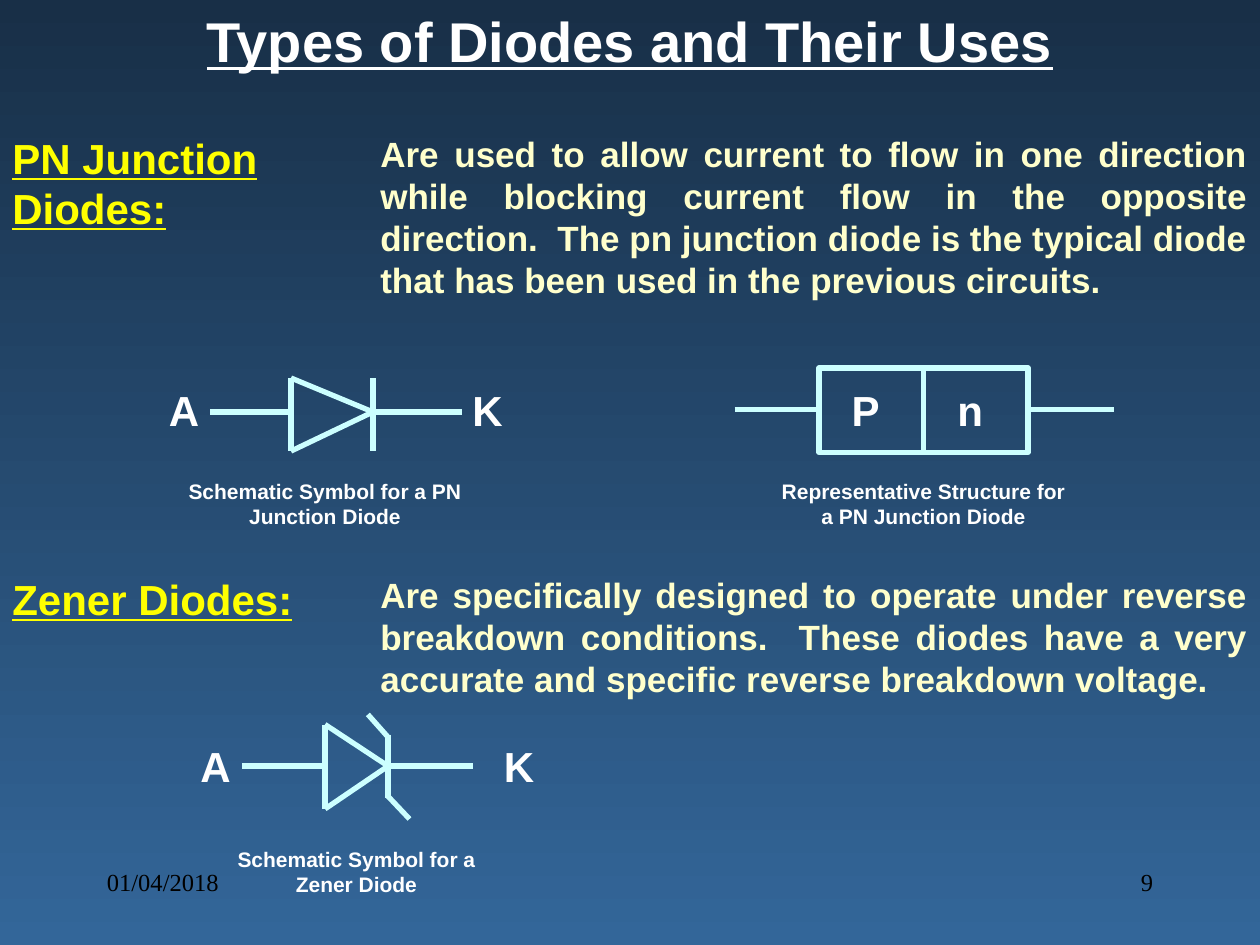
import pptx
import pptx.dml.color
import pptx.enum.shapes
import pptx.enum.text
import pptx.oxml
import pptx.oxml.ns
import pptx.util
from pptx.util import Inches

COLORS = {
    "top": "182F47",
    "bottom": "336699",
    "heading": "FFFF00",
    "body": "FFFFCC",
    "label": "FFFFFF",
    "symbol": "CCFFFF",
    "footer": "000000",
}
ALIGN = pptx.enum.text.PP_ALIGN


def rgb(name):
    return pptx.dml.color.RGBColor.from_string(COLORS[name])


class DiodeSlide:
    """Holds the slide and draws its kinds of element in one style."""

    font = "Arial"
    line_width = pptx.util.Pt(3)

    def __init__(self, prs):
        self.slide = prs.slides.add_slide(prs.slide_layouts[5])
        self.shapes = self.slide.shapes
        fill = self.slide.background.fill
        fill.gradient()
        fill.gradient_angle = 270
        for stop, name in zip(fill.gradient_stops, ("top", "bottom")):
            stop.color.rgb = rgb(name)

    def set_text(self, shape, wording, size, color, align=ALIGN.LEFT,
                 bold=True, underline=False, font=None):
        frame = shape.text_frame
        frame.text = wording
        frame.word_wrap = True
        frame.auto_size = pptx.enum.text.MSO_AUTO_SIZE.NONE
        frame.vertical_anchor = pptx.enum.text.MSO_ANCHOR.TOP
        paragraph = frame.paragraphs[0]
        paragraph.alignment = align
        style = paragraph.runs[0].font
        style.name = font or self.font
        style.size = pptx.util.Pt(size)
        style.bold = bold
        style.underline = underline
        style.color.rgb = rgb(color)

    def title(self, wording):
        title = self.shapes.title
        title.left, title.top = Inches(1), Inches(0)
        title.width, title.height = Inches(8), Inches(0.63)
        self.set_text(title, wording, 32, "label", ALIGN.CENTER, underline=True)

    def text(self, x, y, w, h, wording, size, color, **style):
        box = self.shapes.add_textbox(Inches(x), Inches(y), Inches(w), Inches(h))
        self.set_text(box, wording, size, color, **style)

    def section(self, y, heading, heading_height, body, body_height):
        self.text(0, y, 2.83, heading_height, heading, 24, "heading", underline=True)
        self.text(2.92, y, 7.08, body_height, body, 20, "body", align=ALIGN.JUSTIFY)

    def letter(self, x, y, wording):
        self.text(x, y, 0.58, 0.5, wording, 24, "label", align=ALIGN.CENTER)

    def caption(self, x, y, wording):
        self.text(x, y, 2.5, 0.5, wording, 12, "label", align=ALIGN.CENTER)

    def footer(self, x, wording, align):
        self.text(x, 6.83, 2.08, 0.5, wording, 14, "footer", align=align,
                  bold=False, font="Times New Roman")

    def outline(self, shape):
        shape.line.color.rgb = rgb("symbol")
        shape.line.width = self.line_width

    def line(self, x1, y1, x2, y2):
        connector = self.shapes.add_connector(
            pptx.enum.shapes.MSO_CONNECTOR.STRAIGHT,
            Inches(x1), Inches(y1), Inches(x2), Inches(y2))
        self.outline(connector)
        connector._element.spPr.append(pptx.oxml.parse_xml(
            "<a:effectLst %s/>" % pptx.oxml.ns.nsdecls("a")))

    def region(self, x, y, w, h):
        box = self.shapes.add_shape(
            pptx.enum.shapes.MSO_SHAPE.RECTANGLE,
            Inches(x), Inches(y), Inches(w), Inches(h))
        box.fill.background()
        box.shadow.inherit = False
        self.outline(box)

    def bend(self, x1, y1, x2, y2):
        """Draw one bent end of the zener bar."""
        builder = self.shapes.build_freeform(Inches(x1), Inches(y1))
        builder.add_line_segments([(Inches(x2), Inches(y2))], close=False)
        shape = builder.convert_to_shape()
        shape.fill.background()
        shape.shadow.inherit = False
        self.outline(shape)

    def diode(self, anode, base, tip, cathode, axis, top, bottom, bar):
        """Draw leads, triangle and bar; bar is its (top, bottom)."""
        self.line(anode, axis, base, axis)
        self.line(base, top, base, bottom)
        self.line(base, top, tip, axis)
        self.line(base, bottom, tip, axis)
        self.line(tip, axis, cathode, axis)
        self.line(tip, bar[0], tip, bar[1])


def main():
    prs = pptx.Presentation()
    prs.slide_width, prs.slide_height = Inches(10), Inches(7.5)
    page = DiodeSlide(prs)
    page.title("Types of Diodes and Their Uses")

    page.section(
        1, "PN Junction Diodes:", 0.9,
        "Are used to allow current to flow in one direction while blocking "
        "current flow in the opposite direction.  The pn junction diode is the "
        "typical diode that has been used in the previous circuits.", 1.43)
    page.diode(1.67, 2.31, 2.96, 3.67, axis=3.27, top=3, bottom=3.58, bar=(3, 3.58))
    page.letter(1.17, 3, "A")
    page.letter(3.58, 3, "K")
    page.caption(1.33, 3.75, "Schematic Symbol for a PN Junction Diode")

    for x, name in ((6.5, "P"), (7.33, "n")):
        page.region(x, 2.92, 0.83, 0.67)
        page.letter(x + 0.08, 3, name)
    for x in (5.83, 8.17):
        page.line(x, 3.25, x + 0.67, 3.25)
    page.caption(6.08, 3.75, "Representative Structure for a PN Junction Diode")

    page.section(
        4.5, "Zener Diodes:", 0.5,
        "Are specifically designed to operate under reverse breakdown "
        "conditions.  These diodes have a very accurate and specific reverse "
        "breakdown voltage.", 1.1)
    page.diode(1.92, 2.58, 3.08, 3.75, axis=6.08, top=5.75, bottom=6.42, bar=(5.83, 6.33))
    page.bend(3.08, 5.85, 2.92, 5.67)
    page.bend(3.07, 6.31, 3.25, 6.5)
    page.letter(1.42, 5.83, "A")
    page.letter(3.83, 5.83, "K")
    page.caption(1.58, 6.67, "Schematic Symbol for a Zener Diode")

    page.footer(0.75, "01/04/2018", ALIGN.LEFT)
    page.footer(7.17, "9", ALIGN.RIGHT)
    prs.save("out.pptx")


if __name__ == "__main__":
    main()
